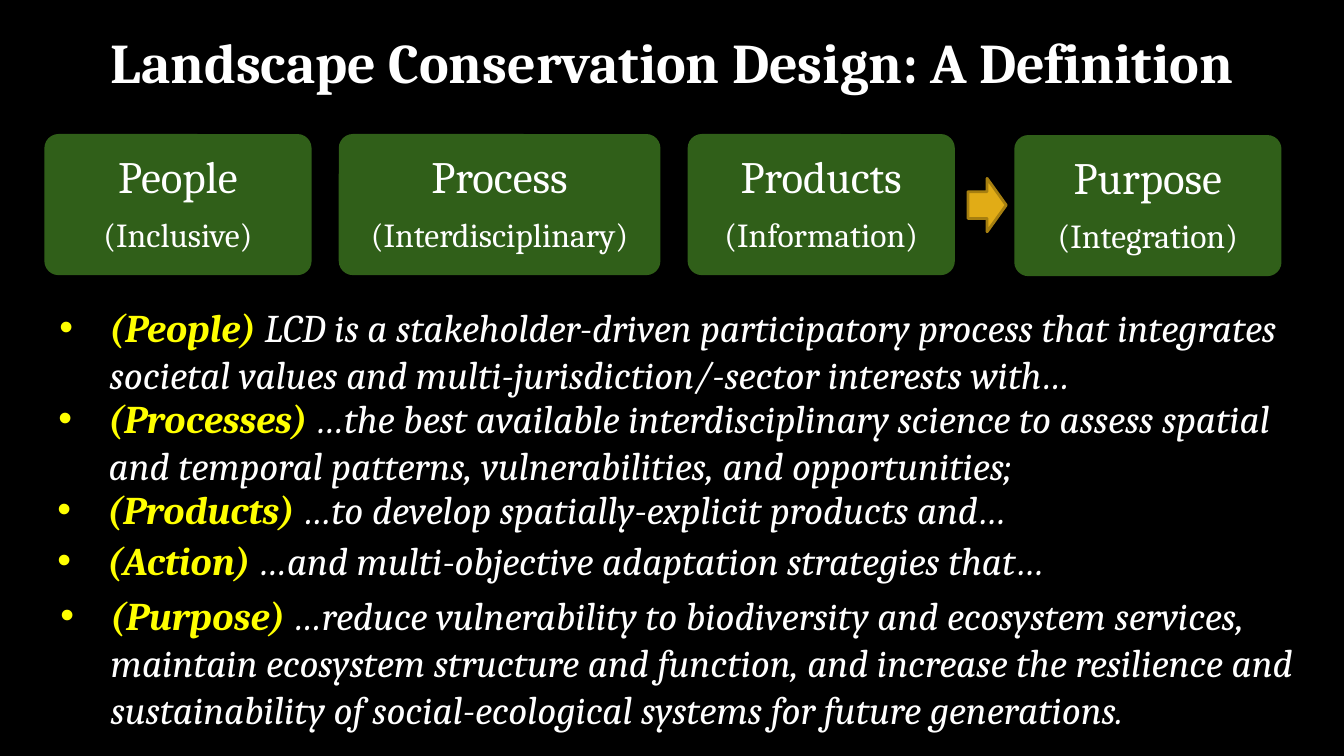
from dataclasses import dataclass

from lxml.etree import SubElement
from pptx import Presentation
from pptx.dml.color import RGBColor
from pptx.enum.shapes import MSO_SHAPE
from pptx.enum.text import MSO_ANCHOR, PP_ALIGN
from pptx.oxml.ns import qn
from pptx.util import Inches, Pt


@dataclass(frozen=True)
class Theme:
    font: str = "Cambria"
    background: str = "000000"
    text: str = "FFFFFF"
    keyword: str = "FFFF00"
    card: str = "305F19"
    arrow: str = "E1AC16"
    arrow_line: str = "A67F10"
    title_size: int = 40
    card_size: int = 32
    card_note_size: int = 24
    body_size: int = 28


THEME = Theme()
CARD_GAP = 0.27
CARD_HEIGHT = 1.4

CARDS = [
    ("People", "(Inclusive)", 2.65),
    ("Process", "(Interdisciplinary)", 3.19),
    ("Products", "(Information)", 2.65),
]
PURPOSE = ("Purpose", "(Integration)")

STATEMENTS = [
    ("(People) ", "LCD is a stakeholder-driven participatory process that integrates "
     "societal values and multi-jurisdiction/-sector interests with…",
     (0.49, 2.96, 12.43, 1.04)),
    ("(Processes) ", "…the best available interdisciplinary science to assess spatial "
     "and temporal patterns, vulnerabilities, and opportunities;",
     (0.48, 3.86, 12.67, 1.04)),
    ("(Products) ", "…to develop spatially-explicit products and…",
     (0.47, 4.77, 12.14, 0.57)),
    ("(Action) ", "…and multi-objective adaptation strategies that…",
     (0.47, 5.27, 12.14, 0.57)),
    ("(Purpose) ", "…reduce vulnerability to biodiversity and ecosystem services, "
     "maintain ecosystem structure and function, and increase the resilience and "
     "sustainability of social-ecological systems for future generations.",
     (0.5, 5.82, 12.43, 1.51)),
]


def color(value):
    return RGBColor.from_string(value)


def add_span(para, text, size, fill=THEME.text, bold=False, italic=False):
    span = para.add_run()
    span.text = text
    span.font.name = THEME.font
    span.font.size = Pt(size)
    span.font.bold = bold
    span.font.italic = italic
    span.font.color.rgb = color(fill)


def add_text_box(page, box):
    frame = page.shapes.add_textbox(*map(Inches, box)).text_frame
    frame.word_wrap = True
    return frame.paragraphs[0]


def add_title(page, box):
    para = add_text_box(page, box)
    para.alignment = PP_ALIGN.CENTER
    add_span(para, "Landscape Conservation Design: A Definition",
             THEME.title_size, bold=True)


def add_block(page, kind, box, fill):
    block = page.shapes.add_shape(kind, *map(Inches, box))
    block.shadow.inherit = False
    block.fill.solid()
    block.fill.fore_color.rgb = color(fill)
    return block


def add_card(page, box, name, note):
    card = add_block(page, MSO_SHAPE.ROUNDED_RECTANGLE, box, THEME.card)
    card.adjustments[0] = 0.1
    card.line.fill.background()
    frame = card.text_frame
    frame.word_wrap = True
    frame.vertical_anchor = MSO_ANCHOR.MIDDLE
    frame.margin_left = frame.margin_right = Inches(0.27)
    frame.margin_top = frame.margin_bottom = Inches(0.27)
    lines = [(name, THEME.card_size), (note, THEME.card_note_size)]
    for index, (text, size) in enumerate(lines):
        para = frame.add_paragraph() if index else frame.paragraphs[0]
        para.alignment = PP_ALIGN.CENTER
        para.line_spacing = 0.9
        para.space_after = Pt(round(size * 0.35))
        add_span(para, text, size)


def add_card_row(page, left, top):
    for name, note, width in CARDS:
        add_card(page, (left, top, width, CARD_HEIGHT), name, note)
        left += width + CARD_GAP
    arrow = add_block(page, MSO_SHAPE.RIGHT_ARROW,
                      (left - 0.14, top + 0.44, 0.38, 0.53), THEME.arrow)
    arrow.line.color.rgb = color(THEME.arrow_line)
    arrow.line.width = Pt(2)
    add_card(page, (left + 0.32, top + 0.01, 2.65, CARD_HEIGHT), *PURPOSE)


def add_statement(page, box, keyword, text):
    para = add_text_box(page, box)
    settings = para._p.get_or_add_pPr()
    settings.set("marL", str(Inches(0.5)))
    settings.set("indent", str(-Inches(0.5)))
    SubElement(settings, qn("a:buFont")).set("typeface", "Arial")
    SubElement(settings, qn("a:buChar")).set("char", "•")
    add_span(para, keyword, THEME.body_size, fill=THEME.keyword, bold=True, italic=True)
    add_span(para, text, THEME.body_size, italic=True)


def main():
    deck = Presentation()
    deck.slide_width = Inches(13.33)
    deck.slide_height = Inches(7.5)
    page = deck.slides.add_slide(deck.slide_layouts[6])
    page.background.fill.solid()
    page.background.fill.fore_color.rgb = color(THEME.background)
    add_title(page, (0, 0.22, 13.33, 0.77))
    add_card_row(page, 0.44, 1.33)
    for keyword, text, box in STATEMENTS:
        add_statement(page, box, keyword, text)
    deck.save("out.pptx")


if __name__ == "__main__":
    main()
